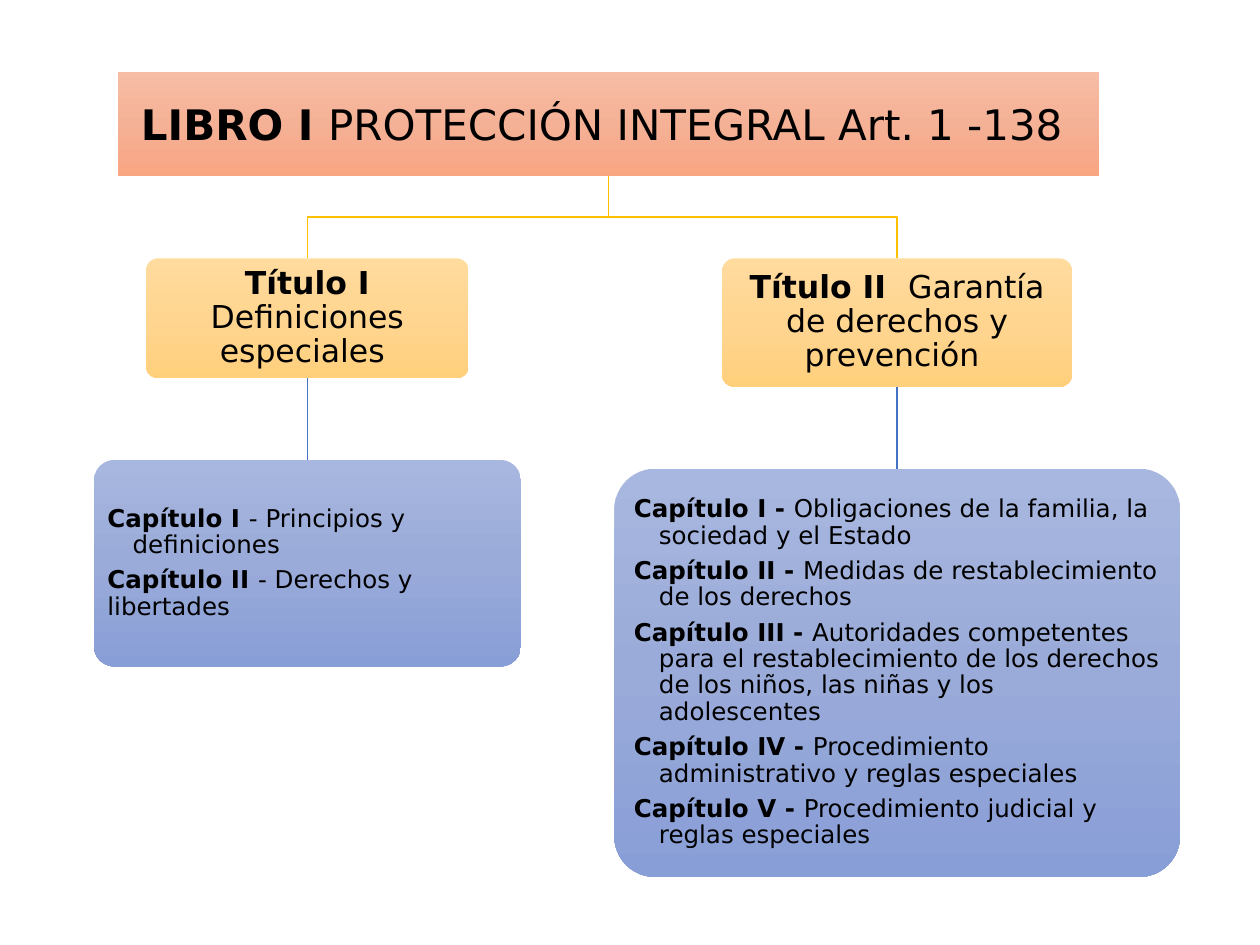
import pptx
import pptx.dml.color
import pptx.enum.shapes
import pptx.enum.text
import pptx.oxml
import pptx.oxml.ns
import pptx.util
from dataclasses import dataclass

Inches = pptx.util.Inches
Pt = pptx.util.Pt
RGBColor = pptx.dml.color.RGBColor
Align = pptx.enum.text.PP_ALIGN
NS = pptx.oxml.ns.nsdecls("a")


@dataclass(frozen=True)
class Theme:
    font: str = "DejaVu Sans"
    text: str = "000000"
    book_fill: tuple = ("F7BDA5", "F5B196", "F8A582")
    title_fill: tuple = ("FFDB9E", "FFD590", "FFD07C")
    chapter_fill: tuple = ("A8B7DF", "9AABD9", "889ED7")
    branch_line: str = "FFC000"
    stem_line: str = "4472C4"
    book_size: int = 24
    title_size: int = 18
    chapter_size: int = 14
    line_width: int = 1
    corner: float = 0.1


THEME = Theme()
LEVEL_GAP = 0.65
BOOK_CENTER, BOOK_TOP, BOOK_WIDTH, BOOK_HEIGHT = 4.83, 0.57, 7.79, 0.83
BOOK = ("LIBRO I ", "PROTECCIÓN INTEGRAL Art. 1 -138 ")
BRANCHES = [
    {
        "center": 2.44,
        "title": ("Título I ", "Definiciones especiales "),
        "title_box": (2.56, 0.95),
        "chapter_box": (3.39, 1.64),
        "chapters": [
            ("Capítulo I ", "- Principios y definiciones", True),
            ("Capítulo II ", "- Derechos y libertades", False),
        ],
    },
    {
        "center": 7.12,
        "title": ("Título II  ", "Garantía de derechos y prevención "),
        "title_box": (2.78, 1.02),
        "chapter_box": (4.49, 3.24),
        "chapters": [
            ("Capítulo I - ", "Obligaciones de la familia, la sociedad y el Estado", True),
            ("Capítulo II - ", "Medidas de restablecimiento de los derechos", True),
            ("Capítulo III - ", "Autoridades competentes para el restablecimiento de los "
             "derechos de los niños, las niñas y los adolescentes", True),
            ("Capítulo IV - ", "Procedimiento administrativo y reglas especiales", True),
            ("Capítulo V - ", "Procedimiento judicial y reglas especiales", True),
        ],
    },
]


def fill_gradient(box, colors):
    box.fill.gradient()
    box.fill.gradient_angle = 270
    stops = box._element.spPr.find(".//" + pptx.oxml.ns.qn("a:gsLst"))
    for stop in list(stops):
        stops.remove(stop)
    for position, color in zip((0, 50000, 100000), colors):
        stops.append(pptx.oxml.parse_xml(
            f'<a:gs {NS} pos="{position}"><a:srgbClr val="{color}"/></a:gs>'))


def style_box(box, colors):
    fill_gradient(box, colors)
    box.line.fill.background()
    box.shadow.inherit = False


def prepare_frame(frame, inset):
    frame.word_wrap = True
    frame.auto_size = pptx.enum.text.MSO_AUTO_SIZE.NONE
    frame.vertical_anchor = pptx.enum.text.MSO_ANCHOR.MIDDLE
    frame.margin_left = frame.margin_right = Inches(inset)
    frame.margin_top = frame.margin_bottom = Inches(inset)


def write_paragraph(paragraph, label, description, size, align, spacing=0.9, hanging=False):
    paragraph.alignment = align
    paragraph.line_spacing = spacing
    paragraph.space_before = Pt(0)
    paragraph.space_after = Pt(0.35 * size)
    if hanging:
        properties = paragraph._p.get_or_add_pPr()
        properties.set("marL", str(Inches(0.2)))
        properties.set("indent", str(-Inches(0.2)))
    for text, bold in ((label, True), (description, False)):
        run = paragraph.add_run()
        run.text = text
        run.font.name = THEME.font
        run.font.size = Pt(size)
        run.font.bold = bold
        run.font.color.rgb = RGBColor.from_string(THEME.text)


def add_book_title(slide):
    book = slide.shapes.title
    book.left, book.top = Inches(BOOK_CENTER - BOOK_WIDTH / 2), Inches(BOOK_TOP)
    book.width, book.height = Inches(BOOK_WIDTH), Inches(BOOK_HEIGHT)
    book._element.spPr.append(pptx.oxml.parse_xml(
        f'<a:prstGeom {NS} prst="roundRect"><a:avLst>'
        f'<a:gd name="adj" fmla="val {int(THEME.corner * 100000)}"/>'
        '</a:avLst></a:prstGeom>'))
    style_box(book, THEME.book_fill)
    prepare_frame(book.text_frame, 0.1)
    write_paragraph(book.text_frame.paragraphs[0], *BOOK, THEME.book_size, Align.CENTER, 1.0)


def add_box(slide, center, top, size, colors, inset):
    width, height = size
    box = slide.shapes.add_shape(
        pptx.enum.shapes.MSO_SHAPE.ROUNDED_RECTANGLE,
        Inches(center - width / 2), Inches(top), Inches(width), Inches(height))
    box.adjustments[0] = THEME.corner
    style_box(box, colors)
    prepare_frame(box.text_frame, inset)
    return box.text_frame


def style_line(line, color):
    line.width = Pt(THEME.line_width)
    line.color.rgb = RGBColor.from_string(color)


def add_branch_line(slide, center, top):
    middle = Inches(top + LEVEL_GAP / 2)
    builder = slide.shapes.build_freeform(Inches(BOOK_CENTER), Inches(top))
    builder.add_line_segments(
        [(Inches(BOOK_CENTER), middle), (Inches(center), middle),
         (Inches(center), Inches(top + LEVEL_GAP))], close=False)
    branch = builder.convert_to_shape()
    branch.fill.background()
    branch.shadow.inherit = False
    style_line(branch.line, THEME.branch_line)


def add_stem(slide, center, top):
    stem = slide.shapes.add_connector(
        pptx.enum.shapes.MSO_CONNECTOR.STRAIGHT,
        Inches(center), Inches(top), Inches(center), Inches(top + LEVEL_GAP))
    style_line(stem.line, THEME.stem_line)
    stem._element.spPr.append(pptx.oxml.parse_xml(f"<a:effectLst {NS}/>"))


def add_branch(slide, branch):
    center = branch["center"]
    book_bottom = BOOK_TOP + BOOK_HEIGHT
    title_top = book_bottom + LEVEL_GAP
    title_bottom = title_top + branch["title_box"][1]
    add_branch_line(slide, center, book_bottom)
    title = add_box(slide, center, title_top, branch["title_box"], THEME.title_fill, 0.07)
    write_paragraph(title.paragraphs[0], *branch["title"], THEME.title_size, Align.CENTER)
    add_stem(slide, center, title_bottom)
    chapters = add_box(slide, center, title_bottom + LEVEL_GAP, branch["chapter_box"],
                       THEME.chapter_fill, 0.06)
    for index, (label, description, hanging) in enumerate(branch["chapters"]):
        paragraph = chapters.add_paragraph() if index else chapters.paragraphs[0]
        write_paragraph(paragraph, label, description, THEME.chapter_size, Align.LEFT,
                        hanging=hanging)


def main():
    deck = pptx.Presentation()
    deck.slide_width, deck.slide_height = Inches(10), Inches(7.5)
    slide = deck.slides.add_slide(deck.slide_layouts.get_by_name("Title Only"))
    add_book_title(slide)
    for branch in BRANCHES:
        add_branch(slide, branch)
    deck.save("out.pptx")


if __name__ == "__main__":
    main()
